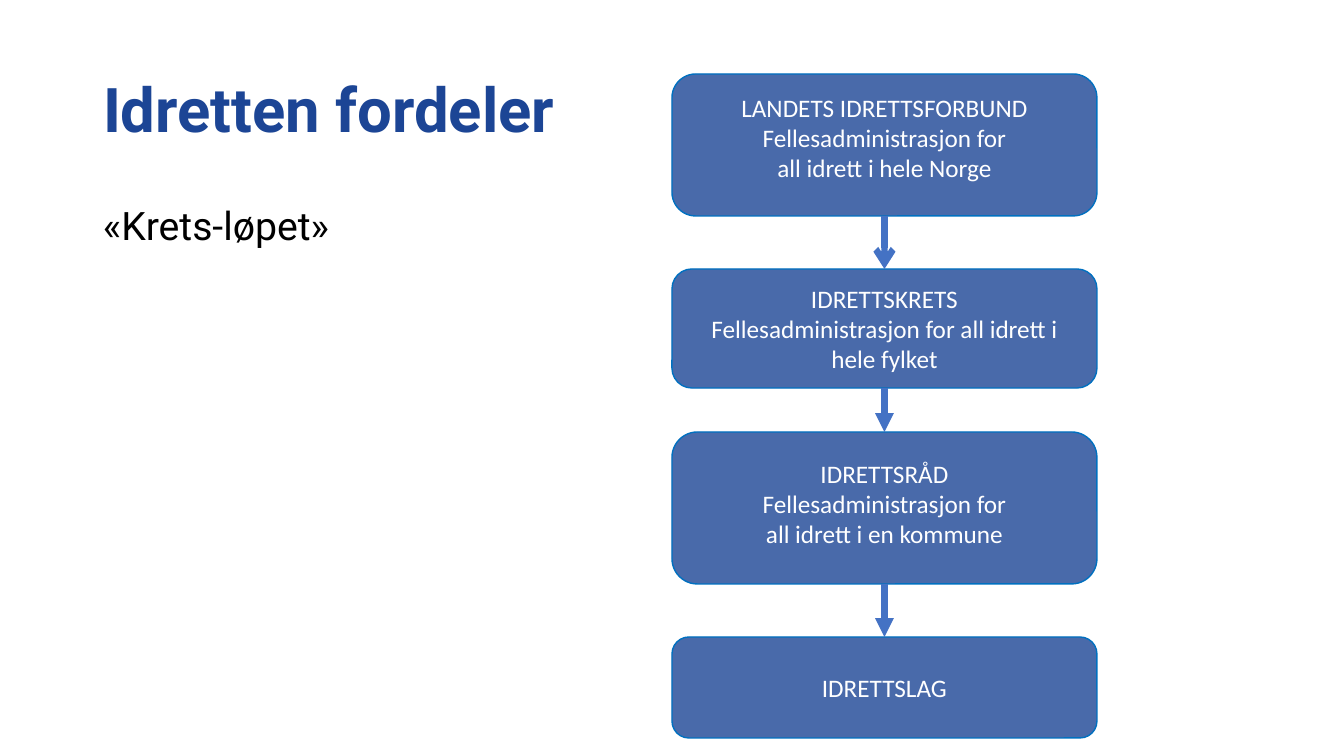
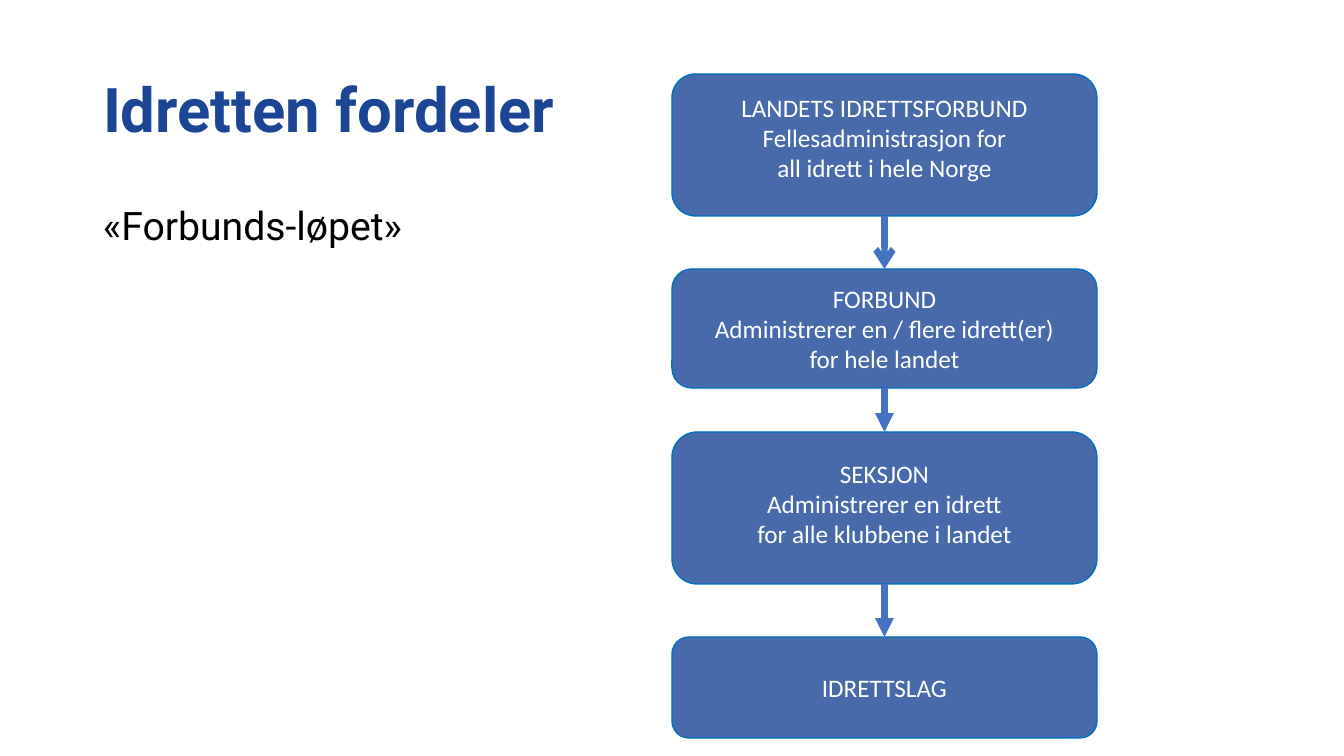
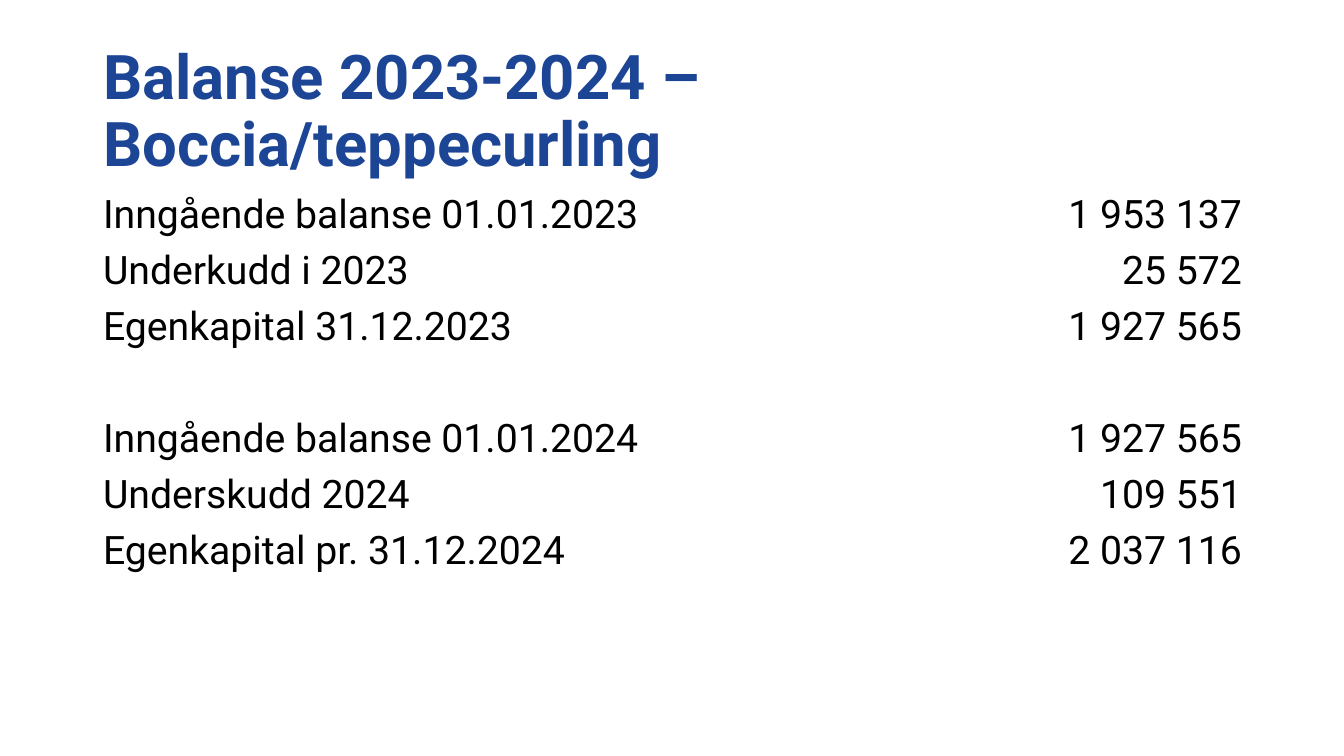
import pptx
import pptx.dml.color
import pptx.enum.shapes
import pptx.enum.text
import pptx.oxml
import pptx.oxml.ns
import pptx.util
from lxml import etree

RGBColor = pptx.dml.color.RGBColor
ALIGN = pptx.enum.text.PP_ALIGN
MIDDLE = pptx.enum.text.MSO_ANCHOR.MIDDLE

NAVY = RGBColor(0x1C, 0x45, 0x95)
OUTLINE = RGBColor(0x00, 0x70, 0xC0)
ARROW = RGBColor(0x44, 0x72, 0xC4)
BLACK = RGBColor(0x00, 0x00, 0x00)
WHITE = RGBColor(0xFF, 0xFF, 0xFF)

TITLE_FONT = {"name": "Roboto", "size": pptx.util.Pt(44), "bold": True}
BODY_FONT = {"name": "Roboto", "size": pptx.util.Pt(28)}
BOX_FONT = {"name": "Calibri", "size": pptx.util.Pt(18)}

NATIONAL_BOX = ["LANDETS IDRETTSFORBUND", "Fellesadministrasjon for", "all idrett i hele Norge"]
CLUB_BOX = ["IDRETTSLAG"]
FLOW_SLIDES = [
    ("Idretten fordeler", "«Krets-løpet»", [
        NATIONAL_BOX,
        ["IDRETTSKRETS", "Fellesadministrasjon for all idrett i hele fylket"],
        ["IDRETTSRÅD", "Fellesadministrasjon for", "all idrett i en kommune"],
        CLUB_BOX,
    ]),
    ("Idretten fordeler", "«Forbunds-løpet»", [
        NATIONAL_BOX,
        ["FORBUND", "Administrerer en / flere idrett(er)", "for hele landet"],
        ["SEKSJON", "Administrerer en idrett", "for alle klubbene i landet"],
        CLUB_BOX,
    ]),
]
BALANCE_TITLE = "Balanse 2023-2024 – Boccia/teppecurling"
BALANCE_ROWS = [
    ("Inngående balanse 01.01.2023", "1 953 137"),
    ("Underkudd i 2023", "25 572"),
    ("Egenkapital 31.12.2023", "1 927 565"),
    ("", ""),
    ("Inngående balanse 01.01.2024", "1 927 565"),
    ("Underskudd 2024", "109 551"),
    ("Egenkapital pr. 31.12.2024", "2 037 116"),
]

# Lengths in px
SLIDE_SIZE = (1344, 756)
TITLE_AREA = (93, 40, 1159, 146)
BODY_AREA = (93, 202, 1159, 480)
TABLE_LEFT, TABLE_TOP, TABLE_WIDTH, ROW_HEIGHT = 93, 187, 1159, 56
BOX_LEFT, BOX_WIDTH = 672, 425
BOX_ROWS = [(74, 142, 15), (269, 119, 0), (432, 152, 9), (637, 101, 0)]  # top, height, bottom inset
ARROW_HEADS = ["arrow", "triangle", "triangle"]


def px(*lengths):
    """Convert px to EMU."""
    return [pptx.util.Emu(round(length * 914400 / 100.8)) for length in lengths]


def write(paragraph, text, font, color, **layout):
    """Fill a paragraph; layout holds paragraph attributes."""
    run = paragraph.add_run()
    run.text = text
    for name, value in font.items():
        setattr(run.font, name, value)
    run.font.color.rgb = color
    for name, value in layout.items():
        setattr(paragraph, name, value)


def add_titled_slide(presentation, text):
    slide = presentation.slides.add_slide(presentation.slide_layouts[5])
    title = slide.shapes.title
    title.left, title.top, title.width, title.height = px(*TITLE_AREA)
    title.text_frame.vertical_anchor = MIDDLE
    title.text_frame.auto_size = pptx.enum.text.MSO_AUTO_SIZE.NONE
    write(title.text_frame.paragraphs[0], text, TITLE_FONT, NAVY,
          alignment=ALIGN.LEFT, line_spacing=0.9)
    return slide


def add_body(slide, text):
    frame = slide.shapes.add_textbox(*px(*BODY_AREA)).text_frame
    frame.word_wrap = True
    write(frame.paragraphs[0], text, BODY_FONT, BLACK,
          line_spacing=0.9, space_before=pptx.util.Pt(10))


def add_box(slide, lines, top, height, bottom_inset):
    box = slide.shapes.add_shape(pptx.enum.shapes.MSO_SHAPE.ROUNDED_RECTANGLE,
                                 *px(BOX_LEFT, top, BOX_WIDTH, height))
    box.shadow.inherit = False
    box.fill.solid()
    box.fill.fore_color.rgb = NAVY
    color = box.fill._xPr.find(".//" + pptx.oxml.ns.qn("a:srgbClr"))
    etree.SubElement(color, pptx.oxml.ns.qn("a:alpha"), val="80000")
    box.line.color.rgb = OUTLINE
    box.line.width = pptx.util.Pt(1)
    frame = box.text_frame
    frame.word_wrap = True
    frame.vertical_anchor = MIDDLE
    frame.margin_top, frame.margin_bottom = px(0, bottom_inset)
    for index, line in enumerate(lines):
        paragraph = frame.add_paragraph() if index else frame.paragraphs[0]
        write(paragraph, line, BOX_FONT, WHITE, alignment=ALIGN.CENTER)


def add_down_arrow(slide, start, end, head):
    center = BOX_LEFT + BOX_WIDTH / 2
    connector = slide.shapes.add_connector(pptx.enum.shapes.MSO_CONNECTOR.STRAIGHT,
                                           *px(center, start, center, end))
    connector.line.color.rgb = ARROW
    connector.line.width = pptx.util.Pt(4.5)
    etree.SubElement(connector.line._get_or_add_ln(), pptx.oxml.ns.qn("a:tailEnd"), type=head)
    etree.SubElement(connector._element.spPr, pptx.oxml.ns.qn("a:effectLst"))


def add_flow(slide, boxes):
    for lines, row in zip(boxes, BOX_ROWS):
        add_box(slide, lines, *row)
    for upper, lower, head in zip(BOX_ROWS, BOX_ROWS[1:], ARROW_HEADS):
        add_down_arrow(slide, upper[0] + upper[1], lower[0], head)


def add_balance_table(slide, rows):
    area = px(TABLE_LEFT, TABLE_TOP, TABLE_WIDTH, ROW_HEIGHT * len(rows))
    table = slide.shapes.add_table(len(rows), 2, *area).table
    table.first_row = table.horz_banding = False
    for row_index, values in enumerate(rows):
        for column, (text, alignment) in enumerate(zip(values, (ALIGN.LEFT, ALIGN.RIGHT))):
            cell = table.cell(row_index, column)
            cell.fill.background()
            if text:
                write(cell.text_frame.paragraphs[0], text, BODY_FONT, BLACK, alignment=alignment)


def main():
    presentation = pptx.Presentation()
    presentation.slide_width, presentation.slide_height = px(*SLIDE_SIZE)
    for title, body, boxes in FLOW_SLIDES:
        slide = add_titled_slide(presentation, title)
        add_body(slide, body)
        add_flow(slide, boxes)
    add_balance_table(add_titled_slide(presentation, BALANCE_TITLE), BALANCE_ROWS)
    presentation.save("out.pptx")


if __name__ == "__main__":
    main()
